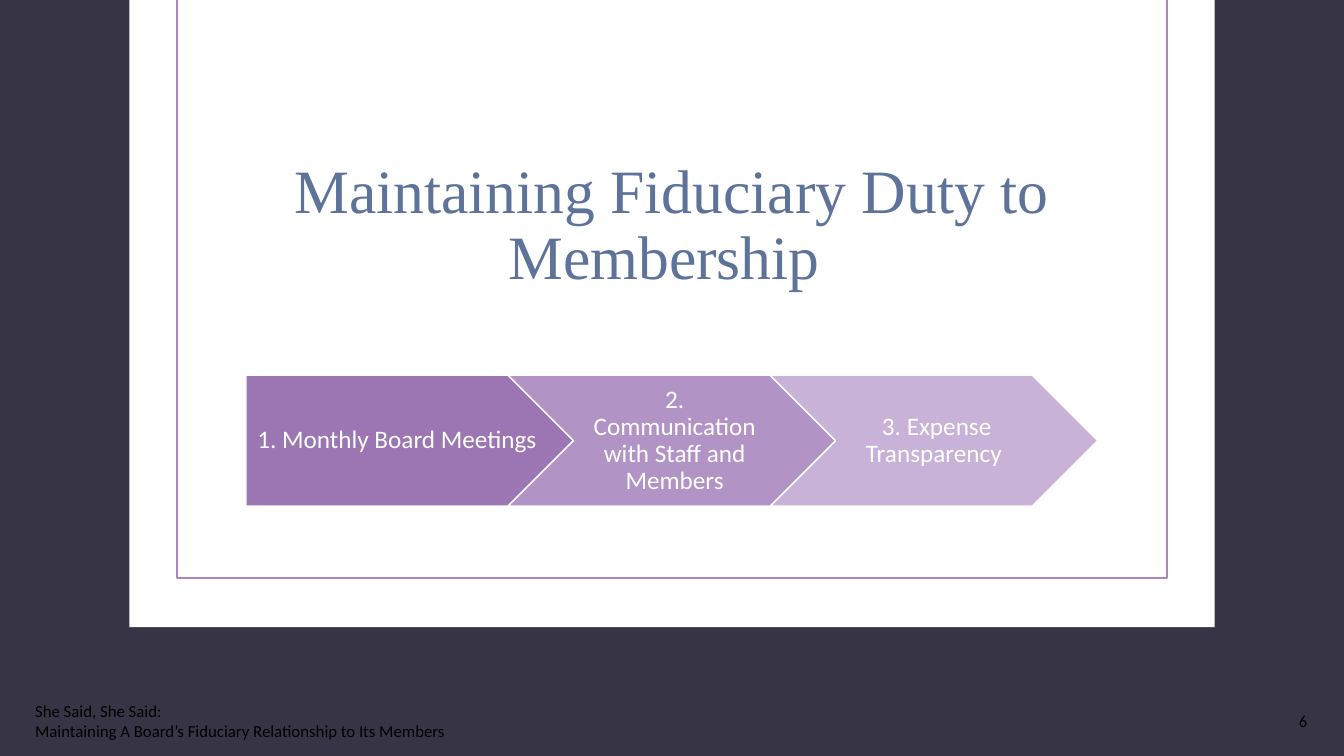
import dataclasses

import pptx
import pptx.dml.color
import pptx.enum.shapes
import pptx.enum.text
import pptx.util

Pt = pptx.util.Pt
Kind = pptx.enum.shapes.MSO_SHAPE
Align = pptx.enum.text.PP_ALIGN
Anchor = pptx.enum.text.MSO_ANCHOR


@dataclasses.dataclass(frozen=True)
class Theme:
    """Colours, fonts and type sizes of the deck."""

    back: str = "373545"
    white: str = "FFFFFF"
    frame: str = "AD84C6"
    title: str = "5D739A"
    note: str = "000000"
    steps: tuple = ("9B76B2", "B293C5", "C8B2D7")
    serif: str = "Times New Roman"
    sans: str = "Calibri"
    big: int = 44
    mid: int = 18
    small: int = 12


THEME = Theme()


def rgb(code):
    """Turn a hex code into a colour."""
    return pptx.dml.color.RGBColor.from_string(code)


def write(shape, text, face, size, tint, align, space=None, pad=(7.2, 7.2)):
    """Set one formatted paragraph, centred vertically in a shape."""
    frame = shape.text_frame
    frame.word_wrap = True
    frame.auto_size = pptx.enum.text.MSO_AUTO_SIZE.NONE
    frame.vertical_anchor = Anchor.MIDDLE
    frame.margin_left, frame.margin_right = (Pt(side) for side in pad)
    frame.margin_top = frame.margin_bottom = Pt(3.6)
    para = frame.paragraphs[0]
    para.text = text
    para.alignment = align
    para.line_spacing = space
    for run in para.runs:
        run.font.name = face
        run.font.size = Pt(size)
        run.font.color.rgb = rgb(tint)


def draw(slide, kind, box, fill=None, line=None):
    """Add a flat preset shape with optional fill and outline."""
    shape = slide.shapes.add_shape(kind, *map(Pt, box))
    shape.shadow.inherit = False
    if fill:
        shape.fill.solid()
        shape.fill.fore_color.rgb = rgb(fill)
    else:
        shape.fill.background()
    if line:
        shape.line.color.rgb = rgb(line)
        shape.line.width = Pt(1)
    else:
        shape.line.fill.background()
    return shape


def card(slide, box):
    """Draw the white card and the thin frame that hangs inside it."""
    left, top, width, height = box
    draw(slide, Kind.RECTANGLE, box, fill=THEME.white)
    inner = (left + 34, top - 1, width - 68, height - 34)
    draw(slide, Kind.RECTANGLE, inner, line=THEME.frame)


def head(slide, box, text):
    """Place the title above the card."""
    title = slide.shapes.title
    title.left, title.top, title.width, title.height = map(Pt, box)
    write(title, text, THEME.serif, THEME.big, THEME.title, Align.CENTER, 0.9)
    title.element.getparent().append(title.element)


def steps(slide, box, labels):
    """Draw a row of interlocking arrows, one for each label."""
    left, top, width, high = box
    lap = high / 2
    count = len(labels)
    wide = (width + lap * 0.4 * 0 + (count - 1) * lap) / count
    for i, (label, fill) in enumerate(zip(labels, THEME.steps)):
        kind = Kind.CHEVRON if i else Kind.PENTAGON
        spot = (left + i * (wide - lap), top, wide, high)
        shape = draw(slide, kind, spot, fill, THEME.white)
        shape.adjustments[0] = 0.5
        pad = (6, 2) if i else (7.2, 2)
        write(shape, label, THEME.sans, THEME.mid, THEME.white,
              Align.CENTER, 0.9, pad)


def foot(slide, box, text, page):
    """Write the running footer at left and the page number at right."""
    left, top, width, height = box
    parts = ((left, 324, text, Align.LEFT),
             (left + width - 216, 216, page, Align.RIGHT))
    for x, wide, words, align in parts:
        area = slide.shapes.add_textbox(*map(Pt, (x, top, wide, height)))
        write(area, words, THEME.sans, THEME.small, THEME.note, align)


def main():
    """Build the slide and save it."""
    deck = pptx.Presentation()
    deck.slide_width, deck.slide_height = Pt(960), Pt(540)
    slide = deck.slides.add_slide(deck.slide_layouts[5])
    slide.background.fill.solid()
    slide.background.fill.fore_color.rgb = rgb(THEME.back)
    card(slide, (92.4, 0, 775.2, 448))
    head(slide, (137.5, 109.5, 685, 104.4),
         "Maintaining Fiduciary Duty to Membership ")
    steps(slide, (175.7, 268, 608.4, 93.6),
          ("1. Monthly Board Meetings ",
           "2. Communication with Staff and Members",
           "3. Expense Transparency "))
    foot(slide, (18, 500.4, 923, 28.8),
         "She Said, She Said:\vMaintaining A Board’s Fiduciary "
         "Relationship to Its Members", "6")
    deck.save("out.pptx")


if __name__ == "__main__":
    main()
